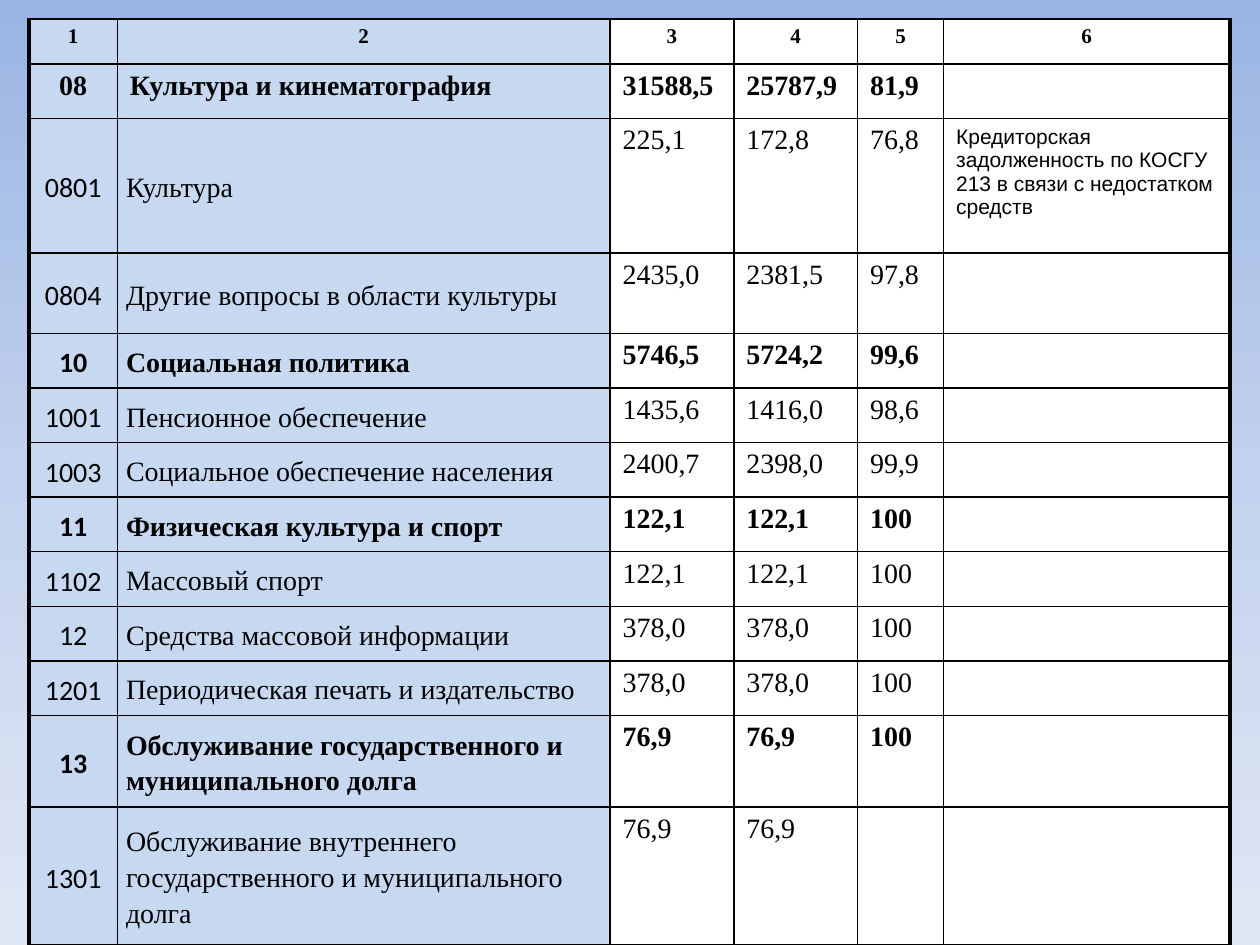
from copy import deepcopy

from lxml.etree import SubElement
from pptx import Presentation
from pptx.dml.color import RGBColor
from pptx.enum.text import MSO_ANCHOR, PP_ALIGN
from pptx.oxml.ns import qn
from pptx.util import Pt

BLACK, WHITE, PALE_BLUE = "000000", "FFFFFF", "C6D9F1"
SERIF = "Times New Roman"
GRADIENT = [(0, "9AB5E4"), (0.5, "C2D1ED"), (1, "E1E8F5")]
COLUMN_WIDTHS = [50.4, 281.6, 70.7, 70.7, 49.2, 163.6]
ROW_HEIGHTS = [25.8, 31.2, 76.8, 46] + [31.2] * 7 + [52.4, 78.6]
BOLD_CODES = {"1", "08", "10", "11", "13"}
DEBT_NOTE = "Кредиторская задолженность по КОСГУ 213 в связи с недостатком средств"
BUDGET_ROWS = [
    ("1", "2", "3", "4", "5", "6"),
    ("08", "Культура и кинематография", "31588,5", "25787,9", "81,9", ""),
    ("0801", "Культура", "225,1", "172,8", "76,8", DEBT_NOTE),
    ("0804", "Другие вопросы в области культуры", "2435,0", "2381,5", "97,8", ""),
    ("10", "Социальная политика", "5746,5", "5724,2", "99,6", ""),
    ("1001", "Пенсионное обеспечение", "1435,6", "1416,0", "98,6", ""),
    ("1003", "Социальное обеспечение населения", "2400,7", "2398,0", "99,9", ""),
    ("11", "Физическая культура и спорт", "122,1", "122,1", "100", ""),
    ("1102", "Массовый спорт", "122,1", "122,1", "100", ""),
    ("12", "Средства массовой информации", "378,0", "378,0", "100", ""),
    ("1201", "Периодическая печать и издательство", "378,0", "378,0", "100", ""),
    ("13", "Обслуживание государственного и муниципального долга", "76,9", "76,9", "100", ""),
    ("1301", "Обслуживание внутреннего государственного и муниципального долга", "76,9", "76,9", "", ""),
]


def color(value):
    """Return the colour for a hex string."""
    return RGBColor.from_string(value)


def paint_background(slide):
    """Fill the slide with a three-stop vertical gradient."""
    fill = slide.background.fill
    fill.gradient()
    fill.gradient_angle = 270
    stop_list = next(slide.element.iter(qn("a:gsLst")))
    stop_list.insert(1, deepcopy(stop_list[0]))
    for stop, (position, value) in zip(fill.gradient_stops, GRADIENT):
        stop.position = position
        stop.color.rgb = color(value)


def draw_borders(cell, column):
    """Outline a cell, with heavier lines at the table's outer sides."""
    properties = cell._tc.get_or_add_tcPr()
    heavy_side = {0: "lnL", len(COLUMN_WIDTHS) - 1: "lnR"}.get(column)
    for index, side in enumerate(("lnL", "lnR", "lnT", "lnB")):
        width = Pt(2.25 if side == heavy_side else 1)
        line = properties.makeelement(qn(f"a:{side}"), {"w": str(width)})
        properties.insert(index, line)
        solid_fill = SubElement(line, qn("a:solidFill"))
        SubElement(solid_fill, qn("a:srgbClr"), val=BLACK)


def write_cell(cell, text, row, column, bold):
    """Set the fill, layout and text of one cell."""
    cell.fill.solid()
    cell.fill.fore_color.rgb = color(PALE_BLUE if column < 2 else WHITE)
    draw_borders(cell, column)
    paragraph = cell.text_frame.paragraphs[0]
    is_label = row > 1 and column < 2
    is_note = row > 0 and column == 5
    if is_label:
        cell.vertical_anchor = MSO_ANCHOR.MIDDLE
        cell.margin_left = cell.margin_right = Pt(5)
        cell.margin_top = cell.margin_bottom = Pt(0)
        paragraph.line_spacing = 1.15
    centered = row == 0 or column == 0
    paragraph.alignment = PP_ALIGN.CENTER if centered else PP_ALIGN.LEFT
    if not text:
        paragraph.font.size = Pt(16)
        return
    run = paragraph.add_run()
    run.text = text
    run.font.size = Pt(12 if row == 0 or is_note else 16)
    run.font.bold = bold
    run.font.color.rgb = color(BLACK)
    if is_note:
        run.font.name = "Arial"
    else:
        run.font.name = "Calibri" if is_label and column == 0 else SERIF


def add_budget_table(slide, left, top, width, height):
    """Place the budget table in the given box."""
    frame = slide.shapes.add_table(
        len(BUDGET_ROWS), len(COLUMN_WIDTHS), Pt(left), Pt(top), Pt(width), Pt(height))
    table = frame.table
    table.first_row = table.horz_banding = False
    for column, column_width in zip(table.columns, COLUMN_WIDTHS):
        column.width = Pt(column_width * width / sum(COLUMN_WIDTHS))
    for row, row_height in zip(table.rows, ROW_HEIGHTS):
        row.height = Pt(row_height * height / sum(ROW_HEIGHTS))
    for row, texts in enumerate(BUDGET_ROWS):
        for column, text in enumerate(texts):
            write_cell(table.cell(row, column), text, row, column, texts[0] in BOLD_CODES)


def main():
    """Build and save the presentation."""
    presentation = Presentation()
    presentation.slide_width = Pt(720)
    presentation.slide_height = Pt(540)
    slide = presentation.slides.add_slide(presentation.slide_layouts[6])
    paint_background(slide)
    add_budget_table(slide, 16.6, 10.8, 686.2, 529.2)
    presentation.save("out.pptx")


if __name__ == "__main__":
    main()
